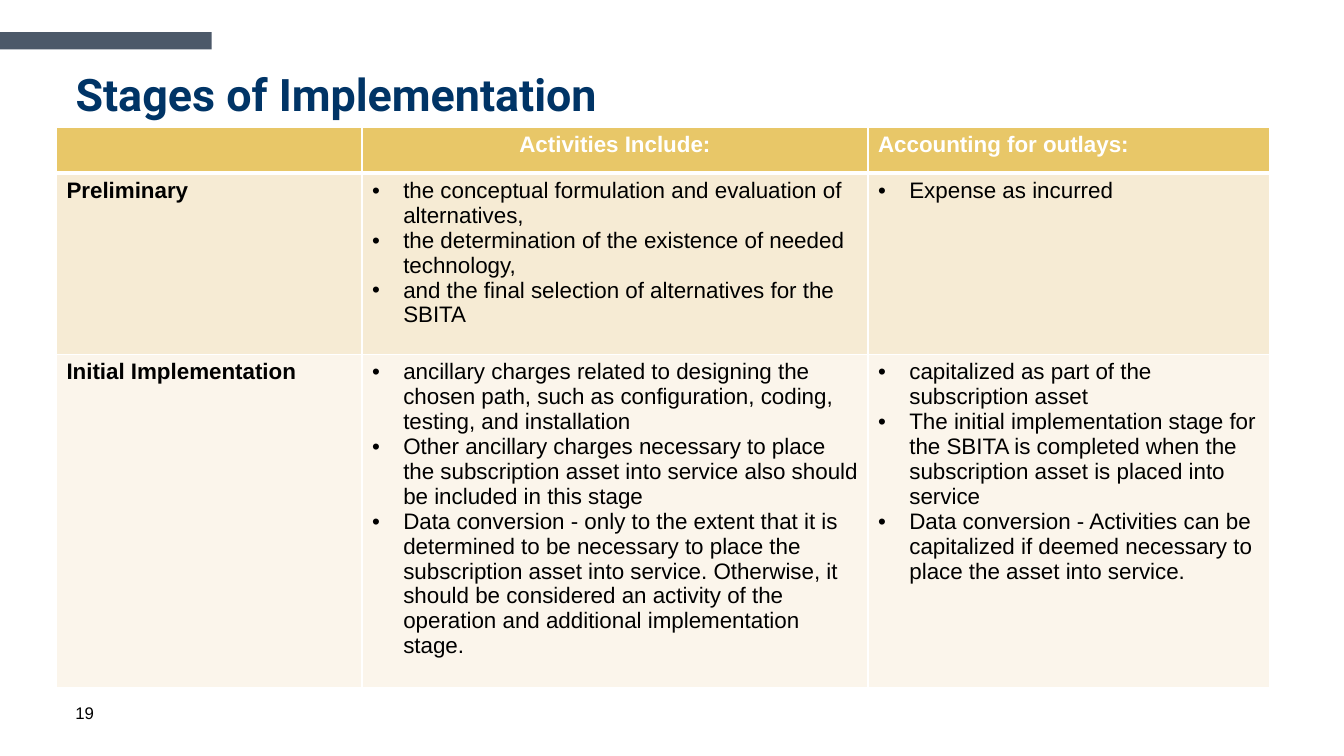
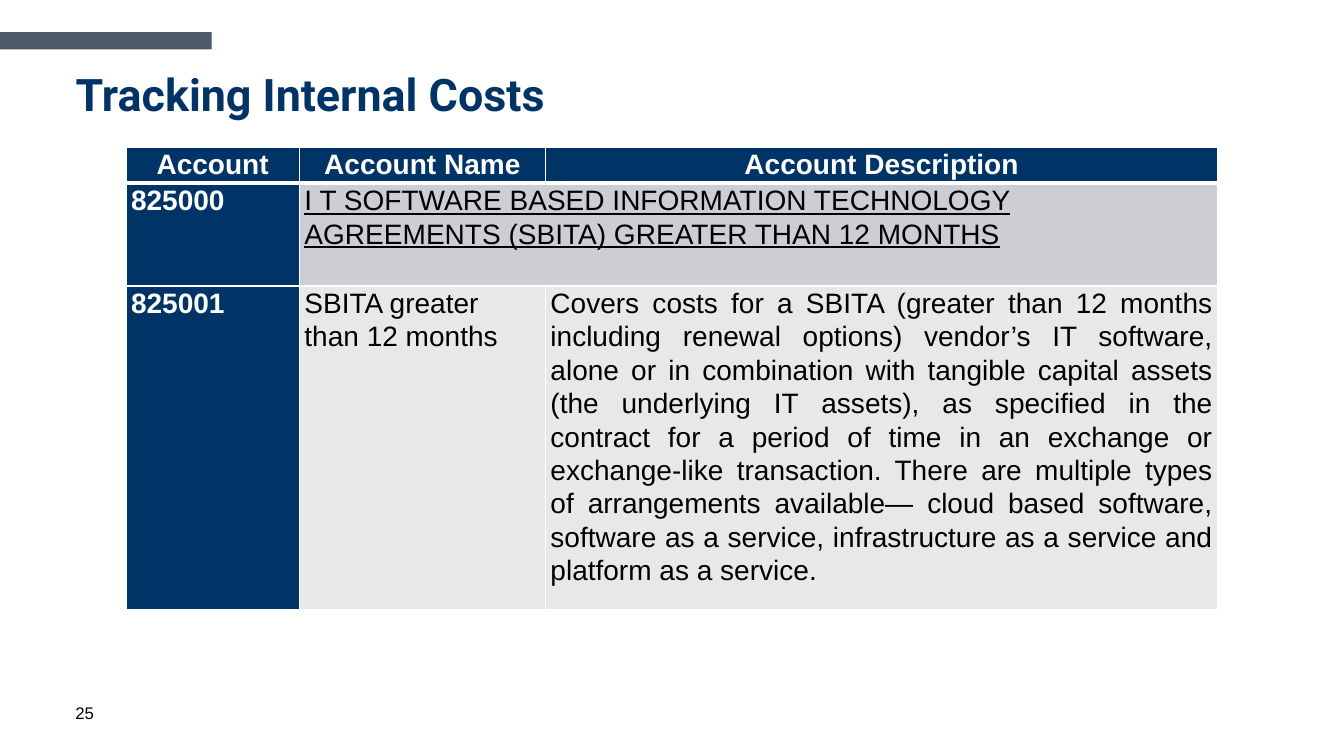
from lxml import etree
from pptx import Presentation
from pptx.dml.color import RGBColor
from pptx.enum.shapes import MSO_SHAPE
from pptx.enum.text import MSO_ANCHOR, MSO_AUTO_SIZE, PP_ALIGN
from pptx.oxml.ns import qn
from pptx.util import Inches, Pt

NAVY = RGBColor(0x00, 0x34, 0x66)
SLATE = RGBColor(0x4C, 0x59, 0x69)
GOLD = RGBColor(0xE8, 0xC7, 0x68)
SAND = RGBColor(0xF6, 0xEB, 0xD4)
CREAM = RGBColor(0xFB, 0xF5, 0xEB)
GREY = RGBColor(0xCC, 0xCE, 0xD3)
PALE_GREY = RGBColor(0xE7, 0xE8, 0xEA)
WHITE = RGBColor(0xFF, 0xFF, 0xFF)
BLACK = RGBColor(0x00, 0x00, 0x00)

BODY_FONT = "Arial"
TITLE_FONT = "Roboto"


def frame_cell(cell, fill, top, bottom):
    """Give a cell white borders (widths in points) and a solid fill."""
    properties = cell._tc.get_or_add_tcPr()
    for side, width in (("L", 1), ("R", 1), ("T", top), ("B", bottom)):
        line = etree.SubElement(properties, qn(f"a:ln{side}"), w=str(Pt(width)))
        solid = etree.SubElement(line, qn("a:solidFill"))
        etree.SubElement(solid, qn("a:srgbClr"), val=str(WHITE))
    cell.fill.solid()
    cell.fill.fore_color.rgb = fill


def write_cell(cell, lines, size, color, bold=False, align=PP_ALIGN.LEFT,
               spacing=1.0, bulleted=False, underline=False):
    """Write one paragraph per line, bulleted if asked."""
    frame = cell.text_frame
    for index, line in enumerate(lines):
        paragraph = frame.add_paragraph() if index else frame.paragraphs[0]
        if bulleted:
            properties = paragraph._p.get_or_add_pPr()
            properties.set("marL", str(Inches(0.31)))
            properties.set("indent", str(-Inches(0.31)))
            etree.SubElement(properties, qn("a:buFont"), typeface=BODY_FONT)
            etree.SubElement(properties, qn("a:buChar"), char="•")
        paragraph.alignment = align
        paragraph.line_spacing = spacing
        run = paragraph.add_run()
        run.text = line
        run.font.name = BODY_FONT
        run.font.size = Pt(size)
        run.font.bold = bold
        run.font.underline = underline
        run.font.color.rgb = color


prs = Presentation()
prs.slide_width = Inches(13.33)
prs.slide_height = Inches(7.5)

# Shared layout: title position
layout = prs.slide_layouts[5]
layout_title = layout.placeholders[0]
layout_title.left, layout_title.top = Inches(0.65), Inches(0.67)
layout_title.width, layout_title.height = Inches(12.02), Inches(0.85)
layout_title.text_frame.vertical_anchor = MSO_ANCHOR.TOP
layout_title.text_frame.auto_size = MSO_AUTO_SIZE.NONE

# Titles and page numbers
slides = []
for title, page in (("Stages of Implementation", "19"),
                    ("Tracking Internal Costs", "25")):
    slide = prs.slides.add_slide(layout)
    slides.append(slide)
    heading = slide.shapes.title.text_frame.paragraphs[0]
    heading.alignment = PP_ALIGN.LEFT
    heading.line_spacing = 0.9
    run = heading.add_run()
    run.text = title
    run.font.name = TITLE_FONT
    run.font.size = Pt(32)
    run.font.bold = True
    run.font.color.rgb = NAVY

    page_box = slide.shapes.add_textbox(Inches(0.65), Inches(6.92), Inches(2.8), Inches(0.3))
    page_box.text_frame.word_wrap = True
    run = page_box.text_frame.paragraphs[0].add_run()
    run.text = page
    run.font.name = BODY_FONT
    run.font.size = Pt(12)
    run.font.color.rgb = BLACK

stages_slide, costs_slide = slides

# Shared band: drawn once, then moved into the layout
band = stages_slide.shapes.add_shape(
    MSO_SHAPE.RECTANGLE, 0, Inches(0.32), Inches(2.1), Inches(0.17))
band.shadow.inherit = False
band.fill.solid()
band.fill.fore_color.rgb = SLATE
band.line.fill.background()
layout.shapes._spTree.append(band._element)

# Both tables: grid and borders
tables = []
for slide, left, top, widths, heights, fills in (
    (stages_slide, 0.56, 1.26, (3.03, 5.02, 3.98), (0.46, 1.8, 3.06),
     ((GOLD,) * 3, (SAND,) * 3, (CREAM,) * 3)),
    (costs_slide, 1.25, 1.46, (1.72, 2.44, 6.67), (0.33, 1.02, 2.98),
     ((NAVY,) * 3, (NAVY, GREY, GREY), (NAVY, PALE_GREY, PALE_GREY))),
):
    table = slide.shapes.add_table(
        3, 3, Inches(left), Inches(top), Inches(sum(widths)), Inches(sum(heights))).table
    tables.append(table)
    for column, width in zip(table.columns, widths):
        column.width = Inches(width)
    for r, height in enumerate(heights):
        table.rows[r].height = Inches(height)
        for c, fill in enumerate(fills[r]):
            frame_cell(table.cell(r, c), fill,
                       top=3 if r == 1 else 1, bottom=3 if r == 0 else 1)

stages, accounts = tables

# Stages of implementation
write_cell(stages.cell(0, 1), ["Activities Include:"], 16, WHITE, bold=True, align=PP_ALIGN.CENTER)
write_cell(stages.cell(0, 2), ["Accounting for outlays:"], 16, WHITE, bold=True)
stage_rows = [
    ("Preliminary",
     ["the conceptual formulation and evaluation of alternatives,",
      "the determination of the existence of needed technology,",
      "and the final selection of alternatives for the SBITA"],
     ["Expense as incurred"]),
    ("Initial Implementation",
     ["ancillary charges related to designing the chosen path, such as configuration, "
      "coding, testing, and installation",
      "Other ancillary charges necessary to place the subscription asset into service "
      "also should be included in this stage",
      "Data conversion - only to the extent that it is determined to be necessary to place "
      "the subscription asset into service. Otherwise, it should be considered an activity "
      "of the operation and additional implementation stage."],
     ["capitalized as part of the subscription asset",
      "The initial implementation stage for the SBITA is completed when the subscription "
      "asset is placed into service",
      "Data conversion - Activities can be capitalized if deemed necessary to place the "
      "asset into service."]),
]
for r, (stage, activities, accounting) in enumerate(stage_rows, start=1):
    write_cell(stages.cell(r, 0), [stage], 16, BLACK, bold=True)
    write_cell(stages.cell(r, 1), activities, 16, BLACK, bulleted=True)
    write_cell(stages.cell(r, 2), accounting, 16, BLACK, bulleted=True)

# Accounts for internal costs
for cell in accounts.iter_cells():
    cell.margin_left = cell.margin_right = Inches(0.05)
    cell.margin_top = cell.margin_bottom = 0
accounts.cell(1, 1).merge(accounts.cell(1, 2))

for c, header in enumerate(("Account", "Account Name", "Account Description")):
    write_cell(accounts.cell(0, c), [header], 20, WHITE, bold=True,
               align=PP_ALIGN.CENTER, spacing=1.07)
for r, number in enumerate(("825000", "825001"), start=1):
    write_cell(accounts.cell(r, 0), [number], 20, WHITE, bold=True, spacing=1.07)
write_cell(accounts.cell(1, 1),
           ["I T SOFTWARE BASED INFORMATION TECHNOLOGY AGREEMENTS (SBITA) "
            "GREATER THAN 12 MONTHS"],
           20, BLACK, spacing=1.07, underline=True)
write_cell(accounts.cell(2, 1), ["SBITA greater than 12 months"], 20, BLACK, spacing=1.07)
write_cell(accounts.cell(2, 2),
           ["Covers costs for a SBITA (greater than 12 months including renewal options) "
            "vendor’s IT software, alone or in combination with tangible capital assets (the "
            "underlying IT assets), as specified in the contract for a period of time in an "
            "exchange or exchange-like transaction. There are multiple types of arrangements "
            "available— cloud based software, software as a service, infrastructure as a "
            "service and platform as a service."],
           20, BLACK, align=PP_ALIGN.JUSTIFY, spacing=1.07)

prs.save("out.pptx")
